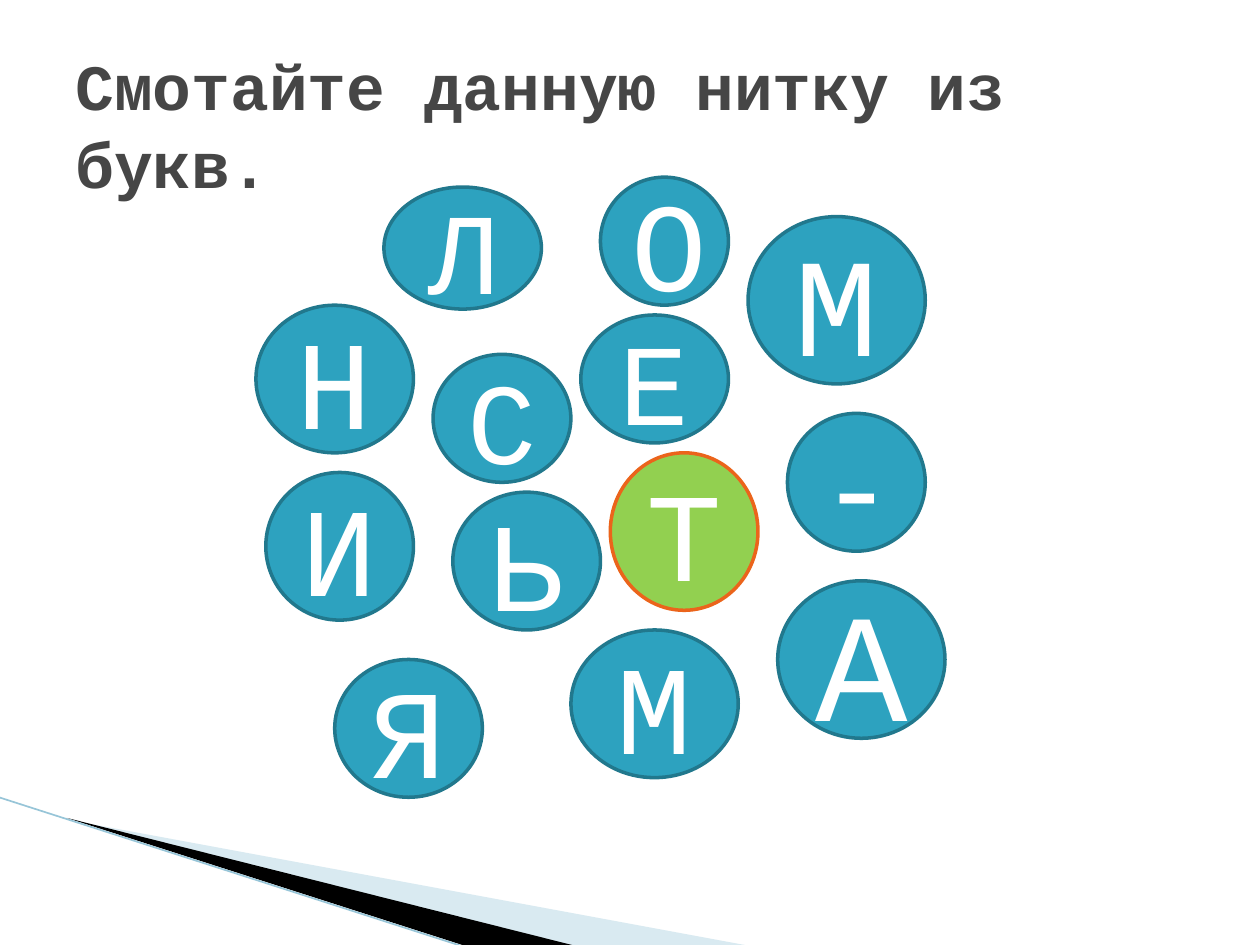
from dataclasses import dataclass

from lxml.etree import SubElement
from pptx import Presentation
from pptx.dml.color import RGBColor
from pptx.enum.shapes import MSO_CONNECTOR, MSO_SHAPE
from pptx.enum.text import MSO_ANCHOR, PP_ALIGN
from pptx.oxml.ns import qn
from pptx.slide import Slide
from pptx.text.text import _Paragraph as Paragraph
from pptx.util import Emu, Pt

PX = 914400 / 128


@dataclass(frozen=True)
class Theme:
    font: str = "Courier New"
    title: str = "464646"
    letter: str = "FFFFFF"
    ball: str = "2DA2BF"
    ball_line: str = "21788D"
    accent: str = "92D050"
    accent_line: str = "EB641B"
    pale_wedge: str = "A0CBDC"
    dark_wedge: str = "000000"
    edge: str = "97C5D8"
    title_size: float = 36.9
    title_leading: float = 44.6
    small: int = 66
    normal: int = 72
    large: int = 80
    huge: int = 88
    ball_width: int = 2
    edge_width: float = 0.95


THEME = Theme()


@dataclass(frozen=True)
class Ball:
    letter: str
    left: int
    top: int
    width: int
    height: int
    size: int = THEME.normal
    fill: str = THEME.ball
    line: str = THEME.ball_line


@dataclass(frozen=True)
class Wedge:
    points: tuple[tuple[int, int], ...]
    fill: str
    opacity: int = 100


WEDGES = (
    Wedge(((70, 833), (762, 961), (584, 961)), THEME.pale_wedge, 40),
    Wedge(((68, 831), (585, 961), (476, 962)), THEME.dark_wedge),
)

BALLS = (
    Ball("Т", 620, 460, 150, 160, fill=THEME.accent, line=THEME.accent_line),
    Ball("Е", 590, 320, 150, 130, THEME.small),
    Ball("С", 440, 360, 140, 130, THEME.small),
    Ball("Ь", 460, 500, 150, 140),
    Ball("М", 580, 640, 170, 150),
    Ball("А", 790, 590, 170, 160, THEME.huge),
    Ball("-", 800, 420, 140, 140),
    Ball("М", 760, 220, 180, 170, THEME.large),
    Ball("О", 610, 180, 130, 130),
    Ball("Л", 390, 190, 160, 124, THEME.small),
    Ball("Н", 260, 310, 160, 150),
    Ball("И", 270, 480, 150, 150),
    Ball("Я", 340, 670, 150, 140),
)


def px(value: int) -> Emu:
    return Emu(round(value * PX))


def rgb(value: str) -> RGBColor:
    return RGBColor.from_string(value)


def add_span(para: Paragraph, text: str, size: float, color: str, bold: bool = False) -> None:
    span = para.add_run()
    span.text = text
    span.font.name = THEME.font
    span.font.size = Pt(size)
    span.font.bold = bold
    span.font.color.rgb = rgb(color)


def draw_wedge(page: Slide, wedge: Wedge) -> None:
    start, *rest = wedge.points
    builder = page.shapes.build_freeform(*start, scale=PX)
    builder.add_line_segments(rest, close=True)
    shape = builder.convert_to_shape()
    shape.shadow.inherit = False
    shape.fill.solid()
    shape.fill.fore_color.rgb = rgb(wedge.fill)
    shape.line.fill.background()
    if wedge.opacity < 100:
        color = shape.fill._xPr.find(qn("a:solidFill"))[0]
        SubElement(color, qn("a:alpha"), val=str(wedge.opacity * 1000))


def draw_edge(page: Slide) -> None:
    edge = page.shapes.add_connector(
        MSO_CONNECTOR.STRAIGHT, px(-1), px(810), px(475), px(963))
    edge.line.color.rgb = rgb(THEME.edge)
    edge.line.width = Pt(THEME.edge_width)
    SubElement(edge._element.spPr, qn("a:effectLst"))


def draw_title(page: Slide, text: str) -> None:
    box = page.shapes.add_textbox(px(64), px(38), px(1152), px(160))
    frame = box.text_frame
    frame.word_wrap = True
    frame.vertical_anchor = MSO_ANCHOR.MIDDLE
    frame.margin_top, frame.margin_bottom = px(20), px(6)
    para = frame.paragraphs[0]
    para.line_spacing = Pt(THEME.title_leading)
    add_span(para, text, THEME.title_size, THEME.title, bold=True)


def draw_ball(page: Slide, ball: Ball) -> None:
    shape = page.shapes.add_shape(
        MSO_SHAPE.FLOWCHART_CONNECTOR,
        px(ball.left), px(ball.top), px(ball.width), px(ball.height))
    shape.shadow.inherit = False
    shape.fill.solid()
    shape.fill.fore_color.rgb = rgb(ball.fill)
    shape.line.color.rgb = rgb(ball.line)
    shape.line.width = Pt(THEME.ball_width)
    shape.text_frame.vertical_anchor = MSO_ANCHOR.MIDDLE
    para = shape.text_frame.paragraphs[0]
    para.alignment = PP_ALIGN.CENTER
    add_span(para, ball.letter, ball.size, THEME.letter)


def main() -> None:
    deck = Presentation()
    deck.slide_width, deck.slide_height = px(1280), px(960)
    page = deck.slides.add_slide(deck.slide_layouts[6])

    # Corner decoration
    for wedge in WEDGES:
        draw_wedge(page, wedge)
    draw_edge(page)

    # Title and letter balls
    draw_title(page, "Смотайте данную нитку из букв.")
    for ball in BALLS:
        draw_ball(page, ball)

    deck.save("out.pptx")


if __name__ == "__main__":
    main()
